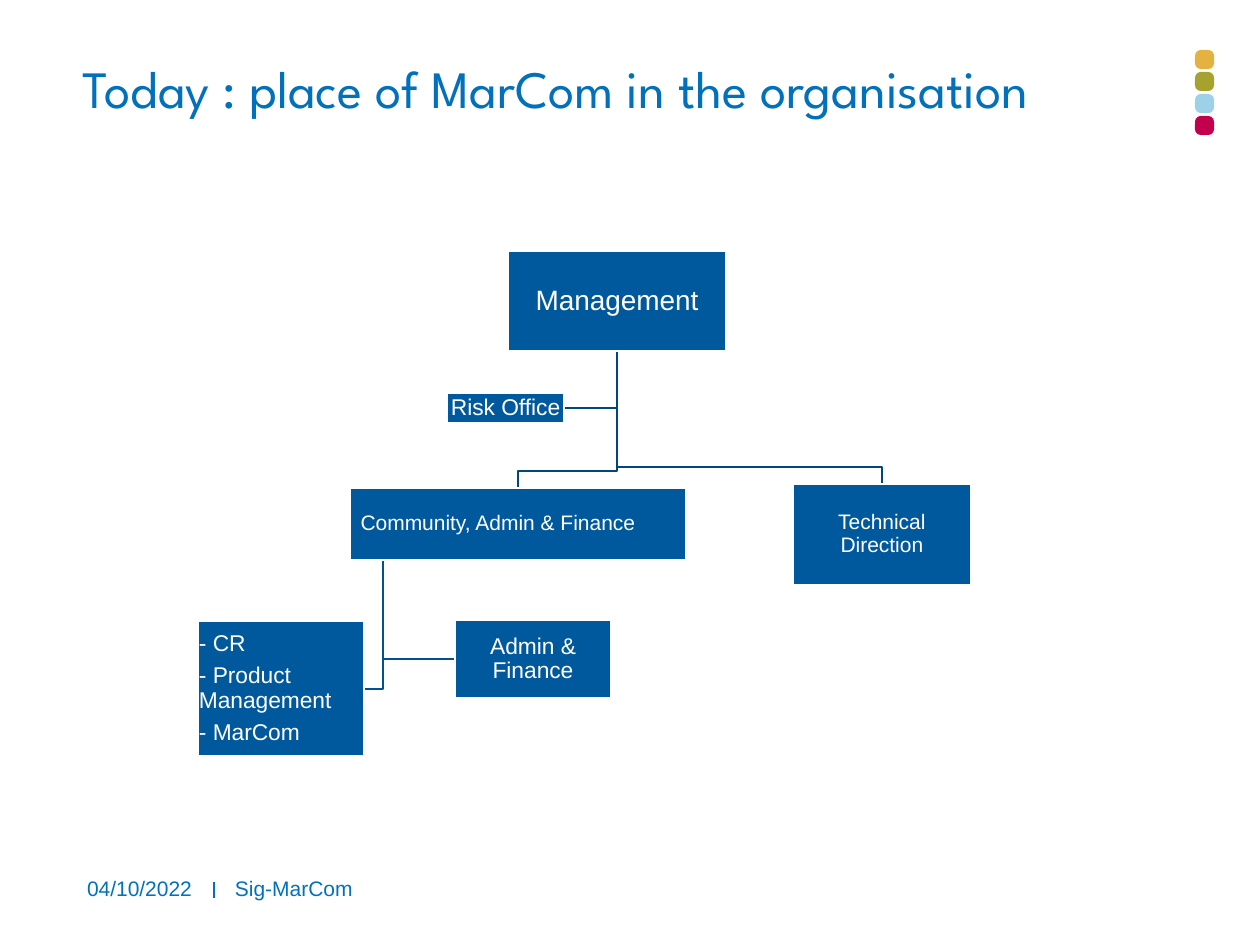
from pptx import Presentation
from pptx.dml.color import RGBColor
from pptx.enum.shapes import MSO_CONNECTOR, MSO_SHAPE
from pptx.enum.text import MSO_ANCHOR as ANCHOR, PP_ALIGN as ALIGN
from pptx.oxml.ns import qn
from pptx.util import Pt
from lxml.etree import SubElement

PX = 914400 / 126
BLUE, BOX, WHITE = "0071BA", "00599C", "FFFFFF"
LINE_TOP, LINE_LOW = "00477D", "00518E"
DOTS = ["E3B240", "A5A32E", "9DD1E7", "C3004D"]


def px(n):
    return round(n * PX)


def rgb(value):
    return RGBColor.from_string(value)


def set_text(sp, lines, size, color, font="Arial", align=ALIGN.LEFT,
             anchor=ANCHOR.TOP, inset=0, spacing=None, after=None):
    tf = sp.text_frame
    tf.word_wrap = True
    tf.vertical_anchor = anchor
    tf.margin_left = tf.margin_right = px(inset)
    tf.margin_top = tf.margin_bottom = px(inset)
    for i, line in enumerate(lines):
        p = tf.paragraphs[0] if i == 0 else tf.add_paragraph()
        p.text = line
        p.alignment = align
        p.line_spacing = spacing
        p.space_after = after
        p.font.size = Pt(size)
        p.font.name = font
        p.font.color.rgb = rgb(color)


def add_title(slide, x, y, w, h):
    s = slide.shapes.title
    s.left, s.top, s.width, s.height = map(px, (x, y, w, h))
    set_text(s, ["Today : place of MarCom in the organisation"], 30, BLUE,
             font="League Spartan", spacing=0.9)


def add_dots(slide, x, y, size, pitch):
    for i, color in enumerate(DOTS):
        s = slide.shapes.add_shape(MSO_SHAPE.ROUNDED_RECTANGLE, px(x),
                                   px(y + i * pitch), px(size), px(size))
        s.adjustments[0] = 0.3
        s.shadow.inherit = False
        s.fill.solid()
        s.fill.fore_color.rgb = rgb(color)
        s.line.fill.background()


def add_footer(slide, x, y):
    for dx, w, text in [(0, 118, "04/10/2022"), (148, 426, "Sig-MarCom")]:
        s = slide.shapes.add_textbox(px(x + dx), px(y), px(w), px(35))
        set_text(s, [text], 12, BLUE)
    line = slide.shapes.add_connector(MSO_CONNECTOR.STRAIGHT, px(x + 127),
                                      px(y + 6), px(x + 127), px(y + 22))
    line.line.color.rgb = rgb(BLUE)
    line.line.width = Pt(1)
    SubElement(line._element.spPr, qn("a:effectLst"))


def add_org_chart(slide, x, y):
    def link(color, start, *points):
        builder = slide.shapes.build_freeform(*start, scale=PX)
        builder.add_line_segments(points, close=False)
        s = builder.convert_to_shape(px(x), px(y))
        s.shadow.inherit = False
        s.fill.background()
        s.line.color.rgb = rgb(color)
        s.line.width = Pt(1)

    def box(left, top, w, h, size, *lines, align=ALIGN.CENTER):
        s = slide.shapes.add_shape(MSO_SHAPE.RECTANGLE, px(x + left),
                                   px(y + top), px(w), px(h))
        s.shadow.inherit = False
        s.fill.solid()
        s.fill.fore_color.rgb = rgb(BOX)
        s.line.color.rgb = rgb(WHITE)
        s.line.width = Pt(1)
        set_text(s, lines, size, WHITE, align=align, anchor=ANCHOR.MIDDLE,
                 inset=1, spacing=0.9, after=Pt(round(size * 0.35, 1)))

    root, trunk = (419, 100), 185
    link(LINE_TOP, root, (419, 157), (366, 157))
    for centre, top in [(684, 233), (320, 237)]:
        link(LINE_TOP, root, (419, top - 17), (centre, top - 17), (centre, top))
    for edge, middle in [(166, 438), (257, 408)]:
        link(LINE_LOW, (trunk, 309), (trunk, middle), (edge, middle))

    box(310, 0, 218, 100, 16, "Management")
    box(152, 237, 336, 72, 12, "Community, Admin & Finance\t")
    box(257, 369, 156, 78, 13, "Admin & Finance")
    box(0, 370, 166, 135, 13, "- CR", "- Product Management", "- MarCom",
        align=ALIGN.LEFT)
    box(595, 233, 178, 101, 12, "Technical Direction")
    box(249, 142, 117, 30, 13, "Risk Office")


def main():
    prs = Presentation()
    prs.slide_width, prs.slide_height = px(1260), px(945)
    slide = prs.slides.add_slide(prs.slide_layouts[5])
    add_dots(slide, 1195, 50, 19, 22)
    add_title(slide, 83, 63, 1086, 129)
    add_org_chart(slide, 198, 251)
    add_footer(slide, 87, 876)
    prs.save("out.pptx")


if __name__ == "__main__":
    main()
